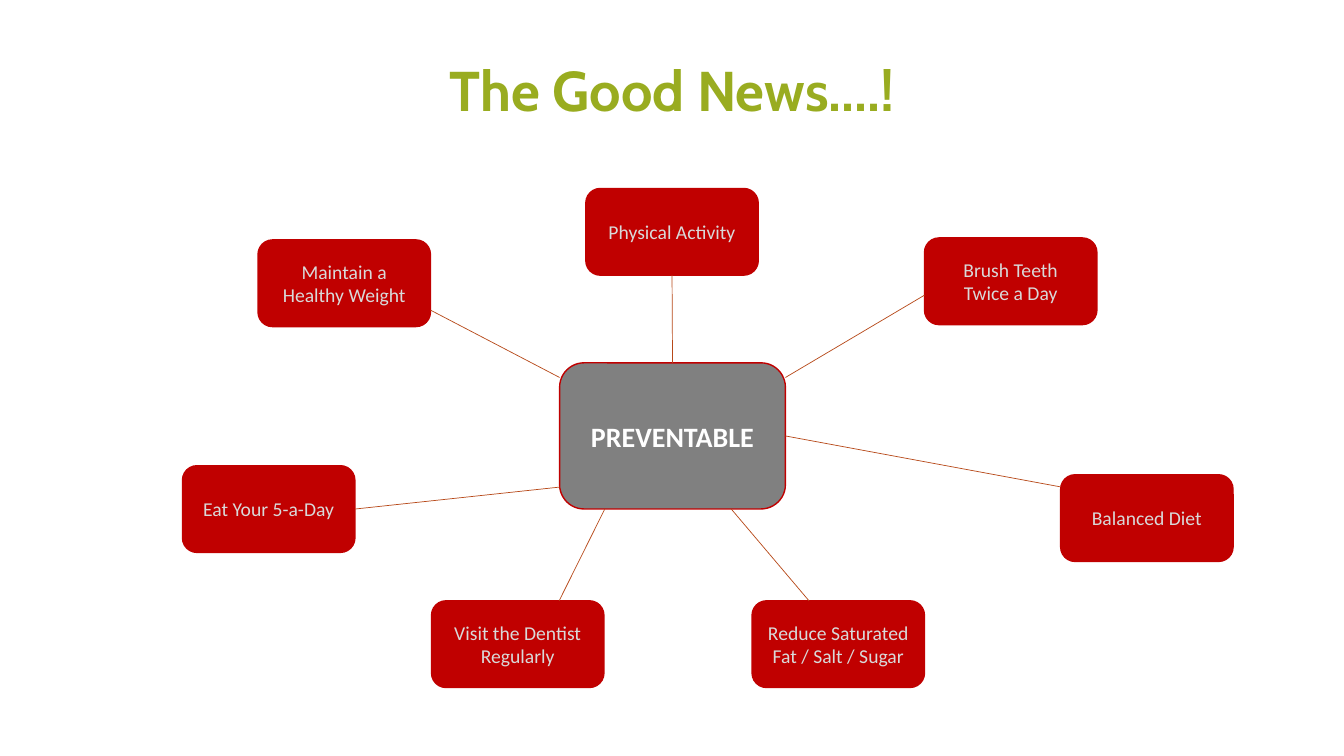
from dataclasses import dataclass

from pptx import Presentation
from pptx.dml.color import RGBColor as Rgb
from pptx.enum.shapes import MSO_CONNECTOR as Connector, MSO_SHAPE as Shape
from pptx.enum.text import MSO_ANCHOR as Anchor, PP_ALIGN as Align
from pptx.oxml.ns import qn
from pptx.util import Inches, Pt
from lxml.etree import SubElement


@dataclass(frozen=True)
class Theme:
    title_font: str = "Cabin"
    body_font: str = "Calibri"
    title_size: int = 40
    hub_size: int = 20
    card_size: int = 14
    green: str = "99AC20"
    grey: str = "808080"
    red: str = "C00000"
    white: str = "FFFFFF"
    pale: str = "D9D9D9"
    rust: str = "B74919"
    outline: float = 1
    spoke: float = 0.5


THEME = Theme()
WIDTH, HEIGHT = Inches(13.33), Inches(7.5)

# Boxes are left, top, width, height in percent of the slide
TITLE_AREA = (6.9, 2.67, 86.27, 19.33)
HUB_AREA = (41.64, 48, 16.8, 19.33)
CARD_SIZE = (12.83, 11.47)

# Card text, its left and top, then where its spoke meets hub and card,
# as shares of each box's width and height
CARDS = [
    ("Maintain a Healthy Weight", (19.2, 31.73), (0, 0.1), (1, 0.81)),
    ("Physical Activity", (43.59, 24.93), (0.5, 0), (0.5, 1)),
    ("Eat Your 5-a-Day", (13.58, 61.6), (0, 0.85), (1, 0.5)),
    ("Visit the Dentist Regularly", (32.11, 79.47), (0.2, 1), (0.74, 0)),
    ("Brush Teeth Twice a Day", (68.79, 31.47), (1, 0.1), (0, 0.66)),
    ("Balanced Diet", (78.92, 62.8), (1, 0.5), (0, 0.14)),
    ("Reduce Saturated Fat / Salt / Sugar", (55.96, 79.47), (0.76, 1), (0.33, 0)),
]

# Connection sites at the middle of each side
SITES = {(0.5, 0): 0, (0, 0.5): 1, (0.5, 1): 2, (1, 0.5): 3}


def place(area):
    """Turn percentages of the slide into lengths."""
    return [int(share * full / 100)
            for share, full in zip(area, (WIDTH, HEIGHT) * 2)]


def write(box, text, font, size, color, bold=False):
    """Put one centred paragraph in a box."""
    frame = box.text_frame
    frame.word_wrap = True
    frame.vertical_anchor = Anchor.MIDDLE
    para = frame.paragraphs[0]
    para.text = text
    para.alignment = Align.CENTER
    para.font.name = font
    para.font.size = Pt(size)
    para.font.bold = bold
    para.font.color.rgb = Rgb.from_string(color)
    return para


def add_title(page, text):
    box = page.shapes.add_textbox(*place(TITLE_AREA))
    para = write(box, text, THEME.title_font, THEME.title_size, THEME.green, True)
    para.line_spacing = 0.9


def add_box(page, area, text, fill, size, color, bold=False):
    """Add a rounded box with a red outline."""
    box = page.shapes.add_shape(Shape.ROUNDED_RECTANGLE, *place(area))
    box.shadow.inherit = False
    box.fill.solid()
    box.fill.fore_color.rgb = Rgb.from_string(fill)
    box.line.color.rgb = Rgb.from_string(THEME.red)
    box.line.width = Pt(THEME.outline)
    write(box, text, THEME.body_font, size, color, bold)
    return box


def point_on(box, share):
    across, down = share
    return int(box.left + across * box.width), int(box.top + down * box.height)


def add_spoke(page, hub, card, hub_share, card_share):
    """Draw a line from hub to card, joined wherever it meets a side's middle."""
    spoke = page.shapes.add_connector(
        Connector.STRAIGHT, *point_on(hub, hub_share), *point_on(card, card_share))
    if hub_share in SITES:
        spoke.begin_connect(hub, SITES[hub_share])
    if card_share in SITES:
        spoke.end_connect(card, SITES[card_share])
    spoke.line.color.rgb = Rgb.from_string(THEME.rust)
    spoke.line.width = Pt(THEME.spoke)
    SubElement(spoke._element.spPr, qn("a:effectLst"))


def main():
    deck = Presentation()
    deck.slide_width, deck.slide_height = WIDTH, HEIGHT
    page = deck.slides.add_slide(deck.slide_layouts[6])

    # Title and central message
    add_title(page, "The Good News....!")
    hub = add_box(page, HUB_AREA, "PREVENTABLE", THEME.grey,
                  THEME.hub_size, THEME.white, bold=True)

    # Habits around the hub
    for text, corner, hub_share, card_share in CARDS:
        card = add_box(page, corner + CARD_SIZE, text, THEME.red,
                       THEME.card_size, THEME.pale)
        add_spoke(page, hub, card, hub_share, card_share)

    deck.save("out.pptx")


if __name__ == "__main__":
    main()
